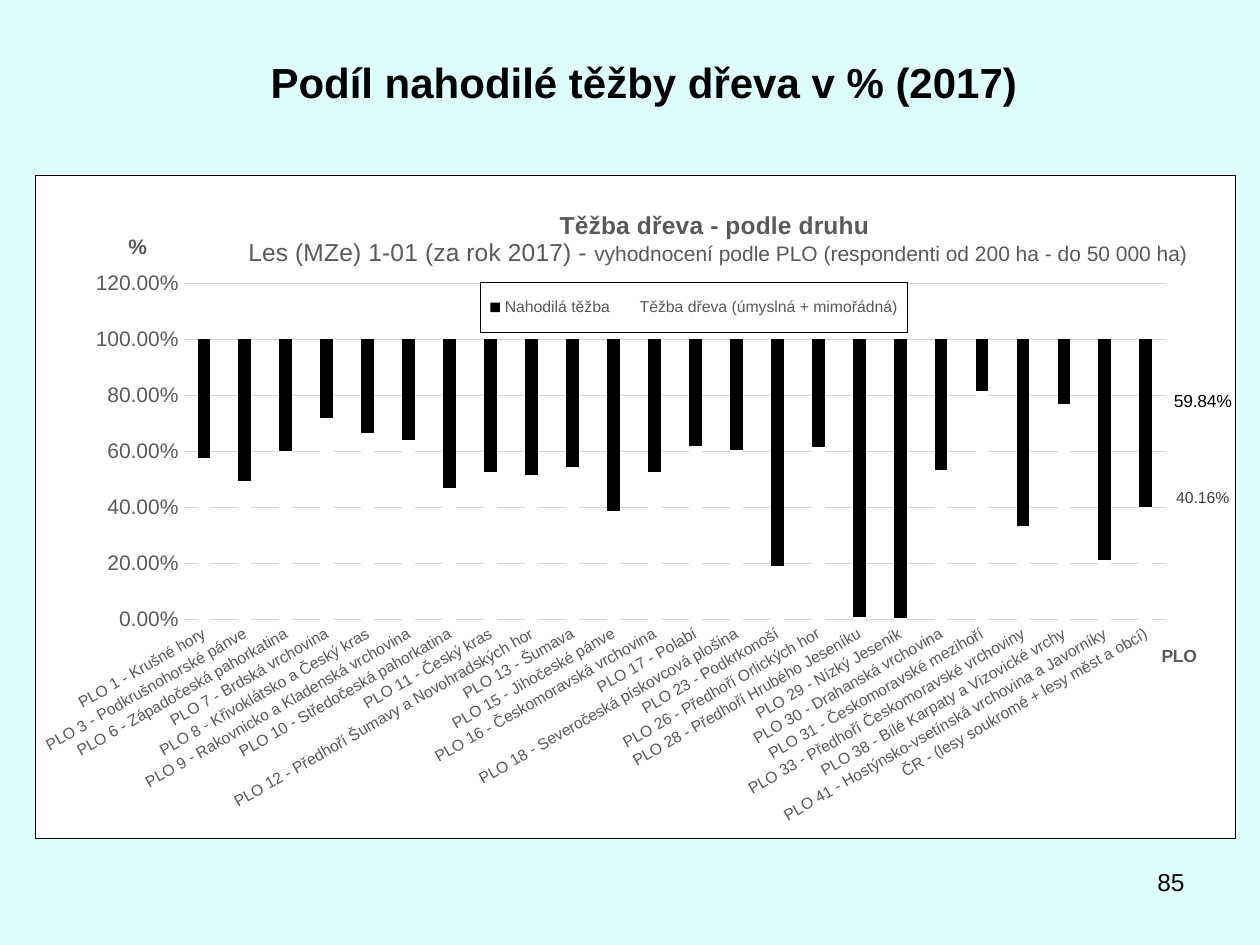
from pptx import Presentation
from pptx.chart.data import CategoryChartData
from pptx.dml.color import RGBColor
from pptx.enum.chart import XL_CHART_TYPE, XL_LEGEND_POSITION, XL_TICK_MARK
from pptx.enum.text import MSO_ANCHOR, PP_ALIGN
from pptx.oxml import parse_xml
from pptx.oxml.ns import nsdecls, qn
from pptx.util import Pt

PX = 7257.6  # EMU per px, 126 px to the inch
CHART_WIDTH, CHART_HEIGHT = 1201, 664

# Share of incidental felling by forest area; the rest is planned felling
INCIDENTAL = {
    "PLO 1 - Krušné hory": 0.4245,
    "PLO 3 - Podkrušnohorské pánve": 0.5062,
    "PLO 6 - Západočeská pahorkatina": 0.3971,
    "PLO 7 - Brdská vrchovina": 0.2810,
    "PLO 8 - Křivoklátsko a Český kras": 0.3329,
    "PLO 9 - Rakovnicko a Kladenská vrchovina": 0.3597,
    "PLO 10 - Středočeská pahorkatina": 0.5318,
    "PLO 11 - Český kras": 0.4718,
    "PLO 12 - Předhoří Šumavy a Novohradských hor": 0.4829,
    "PLO 13 - Šumava": 0.4541,
    "PLO 15 - Jihočeské pánve": 0.6136,
    "PLO 16 - Českomoravská vrchovina": 0.4748,
    "PLO 17 - Polabí": 0.3793,
    "PLO 18 - Severočeská pískovcová plošina": 0.3947,
    "PLO 23 - Podkrkonoší": 0.8083,
    "PLO 26 - Předhoří Orlických hor": 0.3823,
    "PLO 28 - Předhoří Hrubého Jeseníku": 0.9908,
    "PLO 29 - Nízký Jeseník": 0.9939,
    "PLO 30 - Drahanská vrchovina": 0.4648,
    "PLO 31 - Českomoravské mezihoří": 0.1841,
    "PLO 33 - Předhoří Českomoravské vrchoviny": 0.6643,
    "PLO 38 - Bílé Karpaty a Vizovické vrchy": 0.2307,
    "PLO 41 - Hostýnsko-vsetínská vrchovina a Javorníky": 0.7881,
    "ČR - (lesy soukromé + lesy měst a obcí)": 0.5984,
}


def px(length):
    return round(length * PX)


def rgb(color):
    return RGBColor.from_string(color)


def place(element, index, left, top, width=None, height=None, modes="", target=""):
    """Give a chart part a manual layout, in px within the chart."""
    old = element.find(qn("c:layout"))
    if old is not None:
        element.remove(old)
    tags = target + modes
    spans = (CHART_WIDTH, CHART_HEIGHT) * 2
    for tag, value, span in zip("xywh", (left, top, width, height), spans):
        if value is not None:
            tags += f"<c:{tag} val='{value / span}'/>"
    element.insert(index, parse_xml(
        f"<c:layout {nsdecls('c')}><c:manualLayout>{tags}</c:manualLayout></c:layout>"))


EDGE = "<c:xMode val='edge'/><c:yMode val='edge'/>"
INNER = "<c:layoutTarget val='inner'/>"


def frame(element):
    """Add a white fill and a thin black border after a chart part."""
    element.addnext(parse_xml(
        f"<c:spPr {nsdecls('c', 'a')}>"
        "<a:solidFill><a:srgbClr val='FFFFFF'/></a:solidFill>"
        "<a:ln w='9525'><a:solidFill><a:srgbClr val='000000'/></a:solidFill></a:ln>"
        "</c:spPr>"))


class SlideBuilder:
    font = "Arial"
    black, white, gray, grid = "000000", "FFFFFF", "595959", "D9D9D9"

    def __init__(self, page, background):
        self.page = page
        page.background.fill.solid()
        page.background.fill.fore_color.rgb = rgb(background)

    def style(self, font, size, color, bold=False):
        font.name, font.size, font.bold = self.font, Pt(size), bold
        font.color.rgb = rgb(color)

    def text(self, words, left, top, width, height, size, align,
             bold=False, anchor=MSO_ANCHOR.TOP):
        box = self.page.shapes.add_textbox(px(left), px(top), px(width), px(height))
        box.text_frame.word_wrap = True
        box.text_frame.vertical_anchor = anchor
        para = box.text_frame.paragraphs[0]
        para.text, para.alignment = words, align
        self.style(para.font, size, self.black, bold)

    def stacked_chart(self, categories, series, left, top):
        data = CategoryChartData(number_format="0.00%")
        data.categories = categories
        for name, values, _ in series:
            data.add_series(name, values)
        chart = self.page.shapes.add_chart(
            XL_CHART_TYPE.COLUMN_STACKED, px(left), px(top),
            px(CHART_WIDTH), px(CHART_HEIGHT), data).chart
        self.style(chart.font, 10, self.black)
        plot = chart.plots[0]
        plot.gap_width, plot.overlap, plot.vary_by_categories = 219, 100, False
        for item, (_, _, color) in zip(plot.series, series):
            item.format.fill.solid()
            item.format.fill.fore_color.rgb = rgb(color)
        frame(chart.element.find(qn("c:chart")))
        place(chart.element.xpath("c:chart/c:plotArea")[0], 0,
              148, 108, 984, 337, EDGE, INNER)
        return chart

    def chart_title(self, chart, lines, left, top):
        text = chart.chart_title.text_frame
        for number, spans in enumerate(lines):
            para = text.add_paragraph() if number else text.paragraphs[0]
            for words, size, bold in spans:
                span = para.add_run()
                span.text = words
                self.style(span.font, size, self.gray, bold)
        place(chart.element.xpath("c:chart/c:title")[0], 1, left, top, modes=EDGE)

    def axis(self, axis, size, title, title_size, left, top):
        axis.major_tick_mark = axis.minor_tick_mark = XL_TICK_MARK.NONE
        self.style(axis.tick_labels.font, size, self.gray)
        text = axis.axis_title.text_frame
        span = text.paragraphs[0].add_run()
        span.text = title
        self.style(span.font, title_size, self.gray, True)
        body = text._txBody.find(qn("a:bodyPr"))
        body.set("rot", "0")
        body.set("vert", "horz")
        place(axis.axis_title._element, 1, left, top, modes=EDGE)

    def slant_labels(self, axis):
        """Slant every category label by 30 degrees and skip none."""
        element = axis._element
        element.xpath("c:txPr/a:bodyPr")[0].set("rot", "-1800000")
        element.find(qn("c:noMultiLvlLbl")).addprevious(
            parse_xml(f"<c:tickLblSkip {nsdecls('c')} val='1'/>"))

    def line(self, line):
        line.color.rgb = rgb(self.grid)
        line.width = Pt(0.75)

    def legend(self, chart, left, top, width, height):
        chart.has_legend = True
        legend = chart.legend
        legend.position = XL_LEGEND_POSITION.RIGHT
        legend.include_in_layout = False
        self.style(legend.font, 9, self.gray)
        element = chart.element.xpath("c:chart/c:legend")[0]
        place(element, 1, left, top, width, height, EDGE)
        frame(element.find(qn("c:overlay")))

    def point_label(self, series, index, size, color, shift_x, shift_y):
        series.data_labels.show_value = False
        self.style(series.points[index].data_label.font, size, color)
        labels = series._element.find(qn("c:dLbls"))
        for leader in labels.findall(qn("c:showLeaderLines")):
            leader.set("val", "0")
        place(labels.find(qn("c:dLbl")), 1, shift_x, shift_y)


def main():
    deck = Presentation()
    deck.slide_width, deck.slide_height = px(1260), px(945)
    builder = SlideBuilder(deck.slides.add_slide(deck.slide_layouts[6]), "DDFDFF")

    # Page number and heading
    builder.text("85", 903, 861, 294, 66, 14, PP_ALIGN.RIGHT)
    builder.text("Podíl nahodilé těžby dřeva v % (2017)", 63, 38, 1162, 87, 24,
                 PP_ALIGN.CENTER, True, MSO_ANCHOR.MIDDLE)

    # Chart: planned felling lies below incidental felling
    incidental = list(INCIDENTAL.values())
    planned = [round(1 - share, 4) for share in incidental]
    chart = builder.stacked_chart(
        list(INCIDENTAL),
        [("Těžba dřeva (úmyslná + mimořádná)", planned, builder.white),
         ("Nahodilá těžba", incidental, builder.black)],
        35, 175)
    builder.chart_title(chart, [
        [("Těžba dřeva - podle druhu ", 14, True)],
        [("Les (MZe) 1-01 (za rok 2017) - ", 14, False),
         ("vyhodnocení podle PLO (respondenti od 200 ha - do 50 000 ha)", 12, False)],
    ], 209, 30)
    builder.legend(chart, 445, 107, 428, 50)

    # Axes
    areas, shares = chart.category_axis, chart.value_axis
    builder.axis(areas, 9, "PLO", 10, 1124, 467)
    builder.line(areas.format.line)
    builder.slant_labels(areas)
    builder.axis(shares, 12, "%", 12, 89, 54)
    shares.format.line.fill.background()
    builder.line(shares.major_gridlines.format.line)
    shares.minimum_scale, shares.maximum_scale, shares.major_unit = 0, 1.2, 0.2
    shares.tick_labels.number_format = "0.00%"
    shares.tick_labels.number_format_is_linked = False

    # Labels of the national total
    below, above = chart.plots[0].series
    total = len(INCIDENTAL) - 1
    builder.point_label(below, total, 9, "404040", 57, -65)
    builder.point_label(above, total, 10, builder.black, 57, -22)

    # Incidental felling comes first in the series order
    for order, series in enumerate((above, below)):
        series._element.find(qn("c:order")).set("val", str(order))

    deck.save("out.pptx")


if __name__ == "__main__":
    main()
